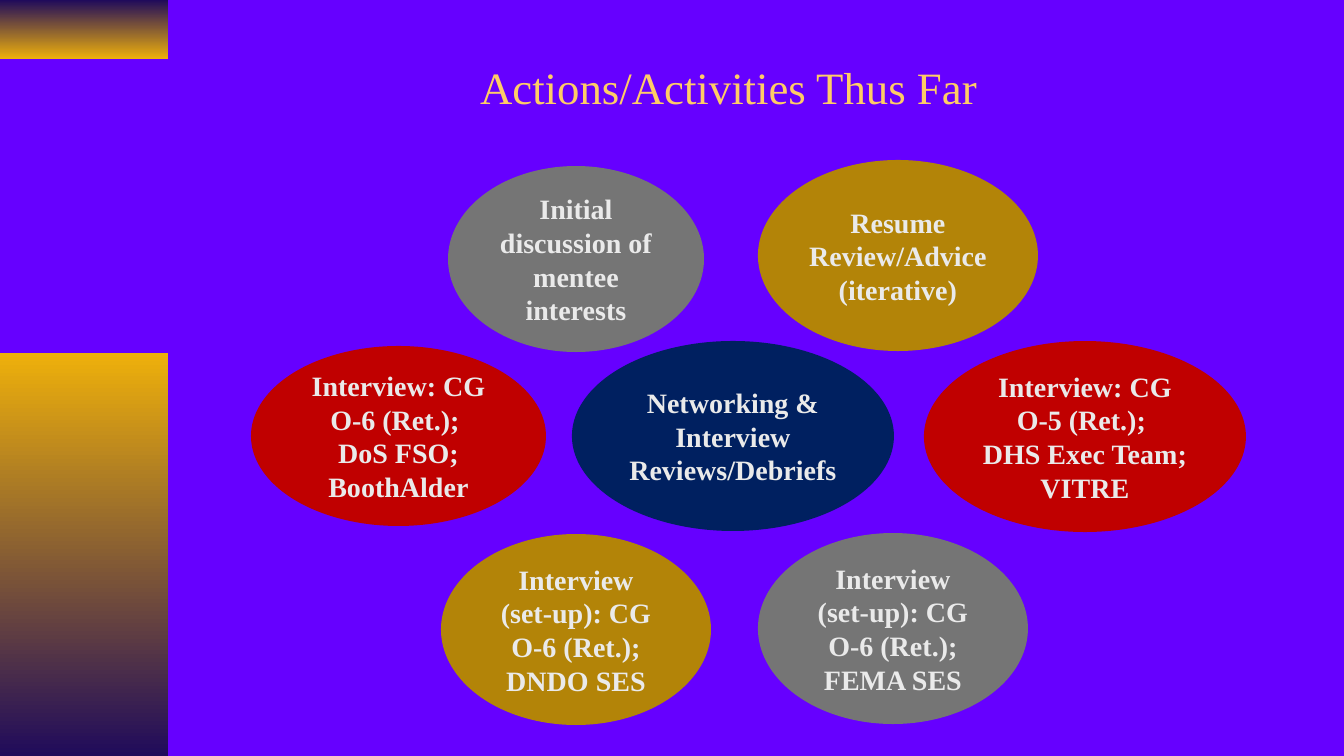
from pptx import Presentation
from pptx.dml.color import RGBColor
from pptx.enum.shapes import MSO_SHAPE
from pptx.enum.text import MSO_ANCHOR, PP_ALIGN
from pptx.util import Emu, Pt

FONT = "Times New Roman"
VIOLET = RGBColor(0x66, 0x00, 0xFF)
INDIGO = RGBColor(0x20, 0x0B, 0x5B)
AMBER = RGBColor(0xEE, 0xB0, 0x0B)
PEACH = RGBColor(0xFF, 0xCC, 0x66)
PALE = RGBColor(0xEA, 0xEA, 0xEA)
GRAY = RGBColor(0x75, 0x75, 0x75)
GOLD = RGBColor(0xB3, 0x84, 0x08)
RED = RGBColor(0xC0, 0x00, 0x00)
NAVY = RGBColor(0x00, 0x20, 0x60)


def px(*lengths):
    return [Emu(round(length * 914400 / 100.8)) for length in lengths]


def write(shape, text, size, color, bold):
    frame = shape.text_frame
    frame.text = text
    frame.word_wrap = True
    frame.vertical_anchor = MSO_ANCHOR.MIDDLE
    for para in frame.paragraphs:
        para.alignment = PP_ALIGN.CENTER
        for span in para.runs:
            span.font.name = FONT
            span.font.size = Pt(size)
            span.font.bold = bold
            span.font.color.rgb = color


deck = Presentation()
deck.slide_width, deck.slide_height = px(1344, 756)
page = deck.slides.add_slide(deck.slide_layouts[5])
page.background.fill.solid()
page.background.fill.fore_color.rgb = VIOLET

for top, height, colors in [(0, 59, (INDIGO, AMBER)), (353, 403, (AMBER, INDIGO))]:
    band = page.shapes.add_shape(MSO_SHAPE.RECTANGLE, *px(0, top, 168, height))
    band.shadow.inherit = False
    band.line.fill.background()
    band.fill.gradient()
    band.fill.gradient_angle = 270
    for stop, color in zip(band.fill.gradient_stops, colors):
        stop.color.rgb = color

title = page.shapes.title
title.left, title.top, title.width, title.height = px(318, 23, 833, 127)
write(title, "Actions/Activities Thus Far ", 32, PEACH, False)

activities = [
    (448, 166, 256, 186, GRAY, "Initial discussion of mentee interests"),
    (758, 160, 280, 191, GOLD, "Resume Review/Advice (iterative)"),
    (251, 346, 295, 180, RED, "Interview: CG O-6 (Ret.); \nDoS FSO; BoothAlder"),
    (572, 341, 322, 190, NAVY, "Networking & Interview Reviews/Debriefs"),
    (924, 341, 322, 191, RED, "Interview: CG O-5 (Ret.); \nDHS Exec Team; VITRE"),
    (441, 534, 270, 191, GOLD, "Interview (set-up): CG O-6 (Ret.); DNDO SES"),
    (758, 533, 270, 191, GRAY, "Interview (set-up): CG O-6 (Ret.); FEMA SES"),
]
for left, top, width, height, color, text in activities:
    bubble = page.shapes.add_shape(MSO_SHAPE.OVAL, *px(left, top, width, height))
    bubble.shadow.inherit = False
    bubble.line.fill.background()
    bubble.fill.solid()
    bubble.fill.fore_color.rgb = color
    write(bubble, text, 20, PALE, True)

deck.save("out.pptx")
